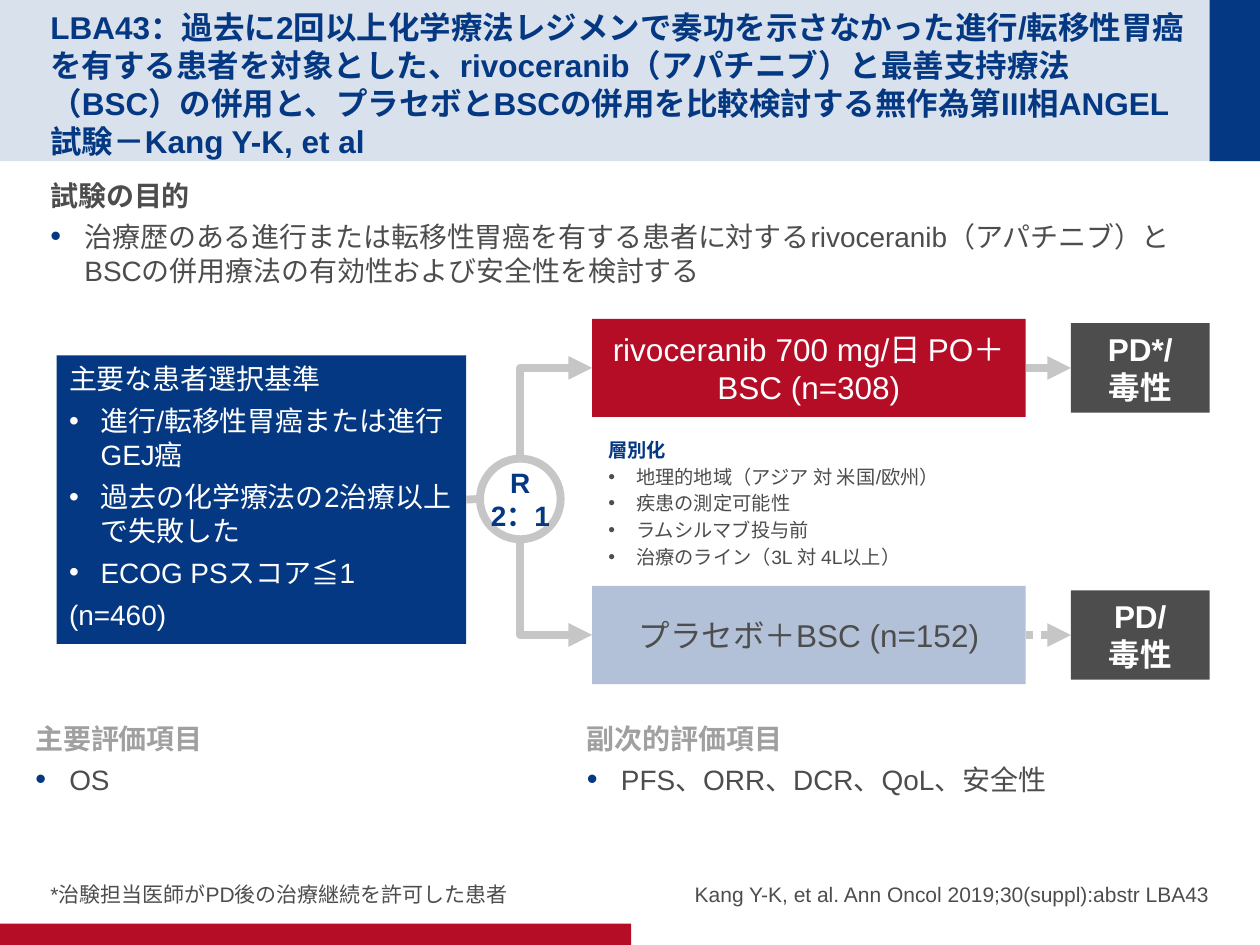
from dataclasses import dataclass
from lxml import etree
from pptx import Presentation
from pptx import util as u
from pptx.dml.color import RGBColor
from pptx.enum import dml, shapes, text
from pptx.oxml.ns import qn


@dataclass(frozen=True)
class Theme:
    font: str = "Arial"
    navy: str = "043882"
    red: str = "B60D27"
    pale: str = "B2C0D8"
    ink: str = "4D4D4D"
    muted: str = "A0A0A0"
    line: str = "C6C6C6"
    white: str = "FFFFFF"
    large: int = 18
    body: int = 16
    note: int = 12
    small: int = 11
    stroke: float = 4.5


T = Theme()
LEFT, MID, CENTER, RIGHT = 0.4, 5.08, text.PP_ALIGN.CENTER, text.PP_ALIGN.RIGHT
TOP, MIDDLE, BOTTOM = (text.MSO_ANCHOR.TOP, text.MSO_ANCHOR.MIDDLE,
                       text.MSO_ANCHOR.BOTTOM)

# Content
TITLE = ("LBA43：過去に2回以上化学療法レジメンで奏功を示さなかった進行/転移性胃癌を有する患者を"
         "対象とした、rivoceranib（アパチニブ）と最善支持療法（BSC）の併用と、プラセボとBSCの併用を"
         "比較検討する無作為第III相ANGEL試験－Kang Y-K, et al")
OBJECTIVE = ("試験の目的", "治療歴のある進行または転移性胃癌を有する患者に対する"
             "rivoceranib（アパチニブ）とBSCの併用療法の有効性および安全性を検討する")
PRIMARY = ("主要評価項目", "OS")
SECONDARY = ("副次的評価項目", "PFS、ORR、DCR、QoL、安全性")
CRITERIA = ("主要な患者選択基準",
            ["進行/転移性胃癌または進行GEJ癌", "過去の化学療法の2治療以上で失敗した",
             "ECOG PSスコア≦1"], "(n=460)")
STRATA = ("層別化", ["地理的地域（アジア 対 米国/欧州）", "疾患の測定可能性",
                  "ラムシルマブ投与前", "治療のライン（3L 対 4L以上）"])
RANDOMISATION = ["R", "2：1"]
# treatment, fill, text colour, outcome, centre height, dash
ARMS = [
    ("rivoceranib 700\u00a0mg/日 PO＋BSC (n=308)", T.red, T.white, "PD*/\v毒性", 2.92, None),
    ("プラセボ＋BSC (n=152)", T.pale, T.ink, "PD/\v毒性", 5.04, dml.MSO_LINE.ROUND_DOT),
]
FOOTNOTE = "*治験担当医師がPD後の治療継続を許可した患者"
CITATION = "Kang Y-K, et al. Ann Oncol 2019;30(suppl):abstr LBA43"

prs = Presentation()
prs.slide_width, prs.slide_height = u.Inches(10), u.Inches(7.5)
slide = prs.slides.add_slide(prs.slide_layouts[4])


def para(content, size=T.body, color=T.ink, bold=False, align=text.PP_ALIGN.LEFT,
         after=0, indent=0, bullet=None):
    return dict(content=content, size=size, color=color, bold=bold, align=align,
                after=after, indent=indent, bullet=bullet)


def write(shape, paras, anchor=TOP, insets=(0.1, 0.05, 0.1, 0.05), wrap=True):
    frame = shape.text_frame
    frame.auto_size, frame.word_wrap = text.MSO_AUTO_SIZE.NONE, wrap
    frame.vertical_anchor = anchor
    (frame.margin_left, frame.margin_top,
     frame.margin_right, frame.margin_bottom) = map(u.Inches, insets)
    for i, item in enumerate(paras):
        p = frame.paragraphs[0] if i == 0 else frame.add_paragraph()
        p.text, p.alignment, p.line_spacing = item["content"], item["align"], 1.0
        p.space_before, p.space_after = u.Pt(0), u.Pt(item["after"])
        p.font.name, p.font.size, p.font.bold = T.font, u.Pt(item["size"]), item["bold"]
        p.font.color.rgb = RGBColor.from_string(item["color"])
        set_bullet(p, item["indent"], item["bullet"])


def set_bullet(p, indent, color):
    props = p._p.get_or_add_pPr()
    props.set("marL", str(u.Inches(indent)))
    props.set("indent", str(-u.Inches(indent)))
    marks = []
    if color:
        fill = etree.Element(qn("a:buClr"))
        etree.SubElement(fill, qn("a:srgbClr"), val=color)
        size = etree.Element(qn("a:buSzPct"), val="110000" if color == T.navy else "100000")
        marks = [fill, size, etree.Element(qn("a:buFont"), typeface=T.font),
                 etree.Element(qn("a:buChar"), char="•")]
    else:
        marks = [etree.Element(qn("a:buNone"))]
    at = props.index(props.find(qn("a:defRPr")))
    for offset, mark in enumerate(marks):
        props.insert(at + offset, mark)


def place(shape, *box):
    shape.left, shape.top, shape.width, shape.height = map(u.Inches, box)
    return shape


def block(box, fill=None, kind=shapes.MSO_SHAPE.RECTANGLE):
    shape = slide.shapes.add_shape(kind, *map(u.Inches, box))
    shape.shadow.inherit = False
    shape.line.fill.background()
    if fill:
        shape.fill.solid()
        shape.fill.fore_color.rgb = RGBColor.from_string(fill)
    else:
        shape.fill.background()
    return shape


def connect(start, end, kind=shapes.MSO_CONNECTOR.STRAIGHT, arrow=True, dash=None):
    line = slide.shapes.add_connector(kind, *map(u.Inches, start + end))
    line.line.color.rgb = RGBColor.from_string(T.line)
    line.line.width = u.Pt(T.stroke)
    if dash:
        line.line.dash_style = dash
    if arrow:
        etree.SubElement(line.line._get_or_add_ln(), qn("a:tailEnd"), type="triangle")
    etree.SubElement(line._element.spPr, qn("a:effectLst"))
    return line


def connect_corner(start, end):
    """Leave start vertically, turn once, and reach end horizontally."""
    line = connect(start, end, shapes.MSO_CONNECTOR.ELBOW)
    rise, run = abs(end[1] - start[1]), end[0] - start[0]
    middle_x, middle_y = (start[0] + end[0]) / 2, (start[1] + end[1]) / 2
    place(line, middle_x - rise / 2, middle_y - run / 2, rise, run)
    upward = end[1] < start[1]
    frame = line._element.spPr.find(qn("a:xfrm"))
    frame.set("rot", str((90 if upward else 270) * 60000))
    frame.set("flipH", "1")
    frame.set("flipV", "1" if upward else "0")
    line._element.spPr.find(qn("a:prstGeom")).set("prst", "bentConnector2")


def section(heading, item, color):
    return [para(heading, color=color, bold=True, after=4),
            para(item, after=4, indent=0.27, bullet=T.navy)]


# Header band and footer bar, behind the placeholders
bars = [((0, 0, 10, 1.28), T.navy), ((9.6, 0, 0.4, 1.28), T.navy),
        ((0, 7.33, 5.01, 0.17), T.red)]
for depth, (box, fill) in enumerate(bars):
    bar = block(box, fill)
    slide.shapes._spTree.insert(2 + depth, bar._element)
    if depth == 0:
        tint = bar._element.spPr.find(".//" + qn("a:srgbClr"))
        etree.SubElement(tint, qn("a:alpha"), val="15000")

# Title, objective, primary endpoint and notes
title, objective, footnote, citation, primary = slide.placeholders
write(place(title, LEFT, 0.2, 9.01, 0.88),
      [para(TITLE, T.large, T.navy, True)], MIDDLE, (0, 0.05, 0, 0))
write(place(objective, LEFT, 1.37, 9.2, 5.19),
      section(*OBJECTIVE, T.ink), insets=(0, 0.05, 0, 0.05))
write(place(footnote, LEFT, 6.67, MID - LEFT, 0.53),
      [para(FOOTNOTE, T.note, after=4)], BOTTOM, (0, 0, 0, 0))
write(place(citation, MID, 6.67, 9.6 - MID, 0.53),
      [para(CITATION, T.note, align=RIGHT, after=4)], BOTTOM, (0, 0, 0, 0))
write(place(primary, 0.28, 5.68, 4.52, 0.85),
      section(*PRIMARY, T.muted), insets=(0, 0.05, 0, 0.05))

# Secondary endpoints
secondary = slide.shapes.add_textbox(0, 0, 0, 0)
write(place(secondary, 4.56, 5.68, 4.92, 0.91), section(*SECONDARY, T.muted))

# Patient criteria
heading, items, total = CRITERIA
criteria = block((0.45, 2.82, 3.25, 2.29), T.navy)
write(criteria, [para(heading, color=T.white, after=5)]
      + [para(i, color=T.white, after=5, indent=0.25, bullet=T.white) for i in items]
      + [para(total, color=T.white, after=5)])

# Randomisation
hub_x, hub_y, radius = 4.13, 3.96, 0.32
hub = block((hub_x - radius, hub_y - radius, 2 * radius, 2 * radius),
            kind=shapes.MSO_SHAPE.OVAL)
hub.line.color.rgb = RGBColor.from_string(T.line)
hub.line.width = u.Pt(T.stroke)
write(hub, [para(r, color=T.navy, bold=True, align=CENTER) for r in RANDOMISATION],
      MIDDLE, wrap=False)
connect((3.7, hub_y), (hub_x - radius, hub_y), arrow=False).begin_connect(criteria, 3)

# Treatment arms and their outcomes
arm_x, arm_w, arm_h, outcome_x, outcome_h = 4.7, 3.44, 0.78, 8.5, 0.71
for treatment, fill, color, outcome, y, dash in ARMS:
    arm = block((arm_x, y - arm_h / 2, arm_w, arm_h), fill)
    write(arm, [para(treatment, T.large, color, align=CENTER)], MIDDLE, (0.1, 0, 0.1, 0))
    end = block((outcome_x, y - outcome_h / 2, 1.1, outcome_h), T.ink)
    write(end, [para(outcome, T.large, T.white, True, CENTER)], MIDDLE, (0.1, 0, 0.1, 0))
    arrow = connect((arm_x + arm_w, y), (outcome_x, y), dash=dash)
    arrow.begin_connect(arm, 3)
    arrow.end_connect(end, 1)
    connect_corner((hub_x, hub_y + (radius if y > hub_y else -radius)), (arm_x, y))

# Stratification
heading, items = STRATA
strata = slide.shapes.add_textbox(0, 0, 0, 0)
write(place(strata, 4.73, 3.43, 5.03, 0.98),
      [para(heading, T.small, T.navy, True, after=2)]
      + [para(i, T.small, after=2, indent=0.22, bullet=T.ink) for i in items])

prs.save("out.pptx")
